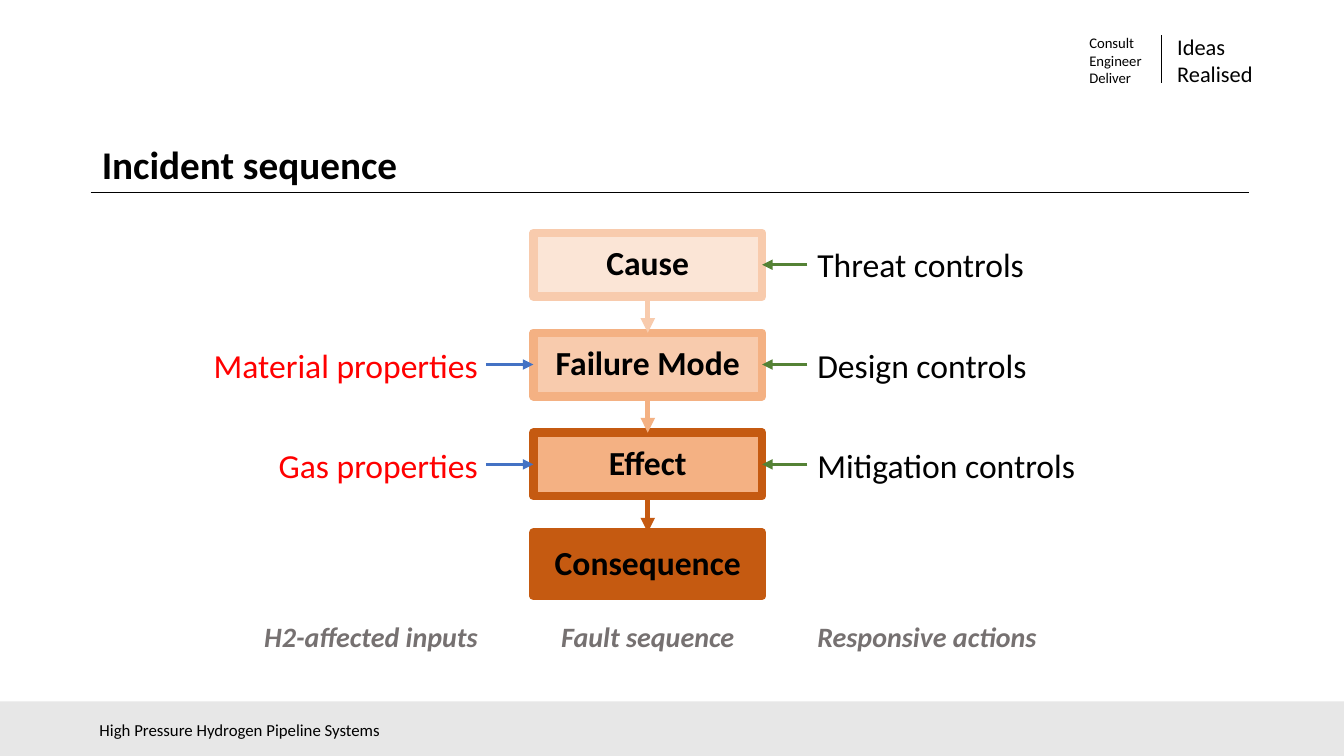
from lxml import etree
from pptx import Presentation
from pptx.dml.color import RGBColor
from pptx.enum.shapes import MSO_CONNECTOR as Connector, MSO_SHAPE as Shape
from pptx.enum.text import MSO_ANCHOR as Anchor, PP_ALIGN as Align
from pptx.oxml.ns import qn
from pptx.util import Pt

BLACK = RGBColor(0x00, 0x00, 0x00)
RED = RGBColor(0xFF, 0x00, 0x00)
GREY = RGBColor(0x76, 0x71, 0x71)
BAND_GREY = RGBColor(0xE7, 0xE7, 0xE7)
BLUE = RGBColor(0x44, 0x72, 0xC4)
GREEN = RGBColor(0x54, 0x82, 0x35)
PALE_PEACH = RGBColor(0xFB, 0xE5, 0xD6)
PEACH = RGBColor(0xF8, 0xCB, 0xAD)
ORANGE = RGBColor(0xF4, 0xB1, 0x83)
RUST = RGBColor(0xC5, 0x5A, 0x11)

FONT = "Calibri"
TOP, BOTTOM_SIDE, LEFT, RIGHT = 0, 2, 1, 3
BOX_LEFT, BOX_TOP, BOX_WIDTH, BOX_HEIGHT = 381, 166.4, 163.4, 45.4
BOX_PITCH = 71.3
LABEL_TOP, LABEL_PITCH, LABEL_HEIGHT = 170.6, 72, 36
CAPTION_TOP, CAPTION_HEIGHT = 439.2, 31.7
INPUT_LEFT, INPUT_WIDTH = 98, 250.4
CONTROL_LEFT, CONTROL_WIDTH = 576.7, 218

# label, fill, outline
STAGES = [
    ("Cause", PALE_PEACH, PEACH),
    ("Failure Mode", PEACH, ORANGE),
    ("Effect", ORANGE, RUST),
    ("Consequence", RUST, RUST),
]
CONTROLS = ["Threat controls", "Design controls", "Mitigation controls"]
INPUTS = {1: "Material properties", 2: "Gas properties"}
CAPTIONS = [
    ("H2-affected inputs", INPUT_LEFT, INPUT_WIDTH, Align.RIGHT),
    ("Fault sequence", BOX_LEFT, BOX_WIDTH, Align.CENTER),
    ("Responsive actions", CONTROL_LEFT, CONTROL_WIDTH, Align.LEFT),
]


def format_text(text_frame, size, color=BLACK, align=Align.LEFT,
                bold=False, italic=False, line_spacing=None):
    for paragraph in text_frame.paragraphs:
        paragraph.alignment = align
        paragraph.line_spacing = line_spacing
        for run in paragraph.runs:
            font = run.font
            font.name, font.size = FONT, Pt(size)
            font.bold, font.italic = bold, italic
            font.color.rgb = color


def add_text(slide, text, left, top, width, height, size,
             anchor=Anchor.TOP, **style):
    shape = slide.shapes.add_textbox(Pt(left), Pt(top), Pt(width), Pt(height))
    text_frame = shape.text_frame
    text_frame.word_wrap = True
    text_frame.vertical_anchor = anchor
    text_frame.text = text
    format_text(text_frame, size, **style)


def add_rectangle(slide, left, top, width, height, fill, outline=None):
    shape = slide.shapes.add_shape(
        Shape.RECTANGLE, Pt(left), Pt(top), Pt(width), Pt(height))
    shape.shadow.inherit = False
    shape.fill.solid()
    shape.fill.fore_color.rgb = fill
    if outline is None:
        shape.line.fill.background()
    else:
        shape.line.color.rgb = outline
        shape.line.width = Pt(6)
    return shape


def add_stage(slide, index, label, fill, outline):
    box = add_rectangle(slide, BOX_LEFT, BOX_TOP + index * BOX_PITCH,
                        BOX_WIDTH, BOX_HEIGHT, fill, outline)
    text_frame = box.text_frame
    text_frame.vertical_anchor = Anchor.MIDDLE
    text_frame.margin_bottom = Pt(7.2)
    text_frame.text = label
    format_text(text_frame, 24, align=Align.CENTER, bold=True)
    return box


def add_line(slide, start, end, color, width, arrow=False):
    line = slide.shapes.add_connector(
        Connector.STRAIGHT, *(Pt(value) for value in (*start, *end)))
    line.line.color.rgb = color
    line.line.width = Pt(width)
    properties = line.line._get_or_add_ln()
    if arrow:
        etree.SubElement(properties, qn("a:tailEnd"), type="triangle")
    etree.SubElement(properties.getparent(), qn("a:effectLst"))
    return line


def add_side_arrow(slide, box, start_x, side, color):
    middle = (box.top + box.height / 2) / Pt(1)
    end_x = BOX_LEFT if side == LEFT else BOX_LEFT + BOX_WIDTH
    arrow = add_line(slide, (start_x, middle), (end_x, middle), color, 2.5, arrow=True)
    arrow.end_connect(box, side)


def add_down_arrow(slide, upper, lower, color):
    center = BOX_LEFT + BOX_WIDTH / 2
    arrow = add_line(slide, (center, (upper.top + upper.height) / Pt(1)),
                     (center, lower.top / Pt(1)), color, 3.5, arrow=True)
    arrow.begin_connect(upper, BOTTOM_SIDE)
    arrow.end_connect(lower, TOP)


def add_frame(slide):
    """Add the title, the tagline and the footer band."""
    title = slide.shapes.title
    title.left, title.top, title.width, title.height = (
        Pt(65.5), Pt(99.4), Pt(289.4), Pt(38.2))
    title.text_frame.text = "Incident sequence"
    title.text_frame.vertical_anchor = Anchor.BOTTOM
    format_text(title.text_frame, 28, bold=True, line_spacing=0.9)
    add_line(slide, (64.8, 137.5), (892, 137.5), BLACK, 0.5)

    add_text(slide, "Consult\nEngineer\nDeliver", 771, 28.8, 80.6, 28.8, 10.5,
             anchor=Anchor.MIDDLE)
    add_line(slide, (829.4, 25.2), (829.4, 59), BLACK, 0.5)
    add_text(slide, "Ideas\nRealised", 833.8, 22.3, 81.4, 41, 16, anchor=Anchor.MIDDLE)

    add_rectangle(slide, 0, 501, 960, 39, BAND_GREY)
    add_text(slide, "High Pressure Hydrogen Pipeline Systems",
             64, 512, 291, 21, 12, line_spacing=0.9)


def main():
    presentation = Presentation()
    presentation.slide_width, presentation.slide_height = Pt(960), Pt(540)
    slide = presentation.slides.add_slide(presentation.slide_layouts[5])
    add_frame(slide)

    boxes = [add_stage(slide, index, *stage) for index, stage in enumerate(STAGES)]
    for upper, lower, (_, _, outline) in zip(boxes, boxes[1:], STAGES):
        add_down_arrow(slide, upper, lower, outline)

    for row, label in enumerate(CONTROLS):
        add_text(slide, label, CONTROL_LEFT, LABEL_TOP + row * LABEL_PITCH,
                 CONTROL_WIDTH, LABEL_HEIGHT, 24)
        add_side_arrow(slide, boxes[row], CONTROL_LEFT, RIGHT, GREEN)
    for row, label in INPUTS.items():
        add_text(slide, label, INPUT_LEFT, LABEL_TOP + row * LABEL_PITCH,
                 INPUT_WIDTH, LABEL_HEIGHT, 24, color=RED, align=Align.RIGHT)
        add_side_arrow(slide, boxes[row], 347, LEFT, BLUE)
    for label, left, width, align in CAPTIONS:
        add_text(slide, label, left, CAPTION_TOP, width, CAPTION_HEIGHT, 20,
                 color=GREY, align=align, bold=True, italic=True)

    presentation.save("out.pptx")


if __name__ == "__main__":
    main()
